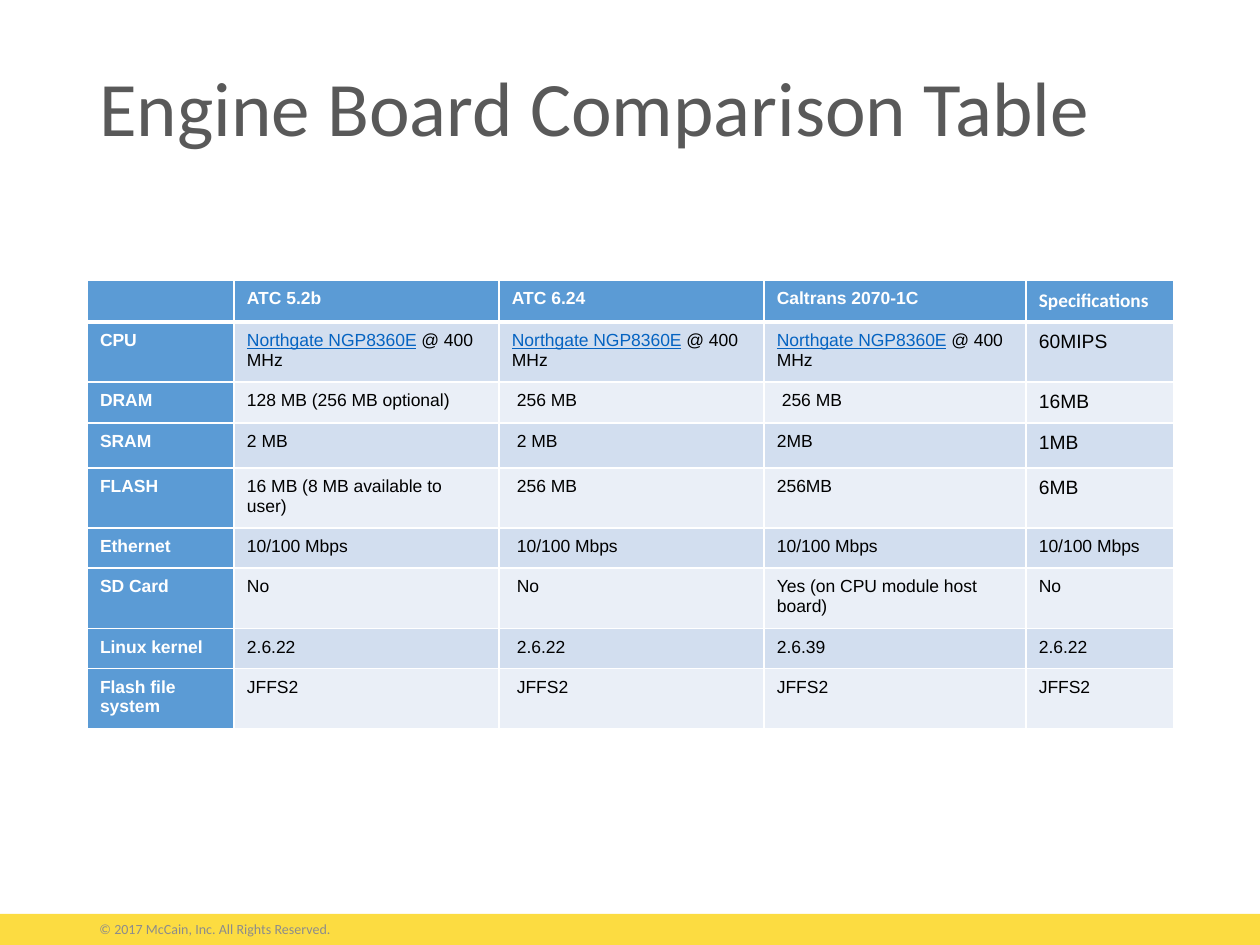
import pptx
import pptx.util
import pptx.dml.color
import pptx.enum.shapes
import pptx.enum.text
import pptx.oxml.ns
from lxml import etree

RGBColor = pptx.dml.color.RGBColor
WHITE = RGBColor(0xFF, 0xFF, 0xFF)
BLACK = RGBColor(0x00, 0x00, 0x00)
GOLD = RGBColor(0xFC, 0xDC, 0x41)
DARK = RGBColor(0x59, 0x59, 0x59)
GREY = RGBColor(0x8C, 0x8C, 0x8C)
BLUE = RGBColor(0x5B, 0x9B, 0xD5)
LINK = RGBColor(0x05, 0x63, 0xC1)
BANDS = [RGBColor(0xEA, 0xEF, 0xF7), RGBColor(0xD2, 0xDE, 0xEF)]

PX = 914400 // 126
Pt = pptx.util.Pt
qn = pptx.oxml.ns.qn
ANCHOR = pptx.enum.text.MSO_ANCHOR

CHIP = "Northgate NGP8360E"
SPEED = " @ 400 MHz"
ROWS = [
    ["", "ATC 5.2b", "ATC 6.24", "Caltrans 2070-1C", "Specifications"],
    ["CPU", CHIP + SPEED, CHIP + SPEED, CHIP + SPEED, "60MIPS"],
    ["DRAM", "128 MB (256 MB optional)", "256 MB", "256 MB", "16MB"],
    ["SRAM", "2 MB", "2 MB", "2MB", "1MB"],
    ["FLASH", "16 MB (8 MB available to user)", "256 MB", "256MB", "6MB"],
    ["Ethernet"] + ["10/100 Mbps"] * 4,
    ["SD Card", "No", "No", "Yes (on CPU module host board)", "No"],
    ["Linux kernel", "2.6.22", "2.6.22", "2.6.39", "2.6.22"],
    ["Flash file system"] + ["JFFS2"] * 4,
]
WIDTHS = [147, 265, 265, 262, 148]
HEIGHTS = [42, 57, 41, 45, 55, 40, 58, 40, 57]


def label(left, top, width, height, text, size, color, anchor):
    box = slide.shapes.add_textbox(left * PX, top * PX, width * PX, height * PX)
    frame = box.text_frame
    frame.word_wrap = True
    frame.vertical_anchor = anchor
    para = frame.paragraphs[0]
    para.text = text
    para.font.name = "Calibri"
    para.font.size = Pt(size)
    para.font.color.rgb = color
    return para


def border(cell, side, width):
    line = etree.SubElement(cell._tc.get_or_add_tcPr(), qn("a:ln" + side), w=str(Pt(width)))
    fill = etree.SubElement(line, qn("a:solidFill"))
    etree.SubElement(fill, qn("a:srgbClr"), val=str(WHITE))


deck = pptx.Presentation()
deck.slide_width = 1260 * PX
deck.slide_height = 945 * PX
slide = deck.slides.add_slide(deck.slide_layouts[6])

bar = slide.shapes.add_shape(
    pptx.enum.shapes.MSO_SHAPE.RECTANGLE, 0, 914 * PX, 1260 * PX, 31 * PX)
bar.shadow.inherit = False
bar.fill.solid()
bar.fill.fore_color.rgb = GOLD
bar.line.fill.background()

title = label(87, 64, 1086, 125, "Engine Board Comparison Table", 44, DARK, ANCHOR.TOP)
title.line_spacing = 0.9

table = slide.shapes.add_table(
    len(ROWS), len(WIDTHS), 87 * PX, 280 * PX, sum(WIDTHS) * PX, sum(HEIGHTS) * PX).table
for col, width in zip(table.columns, WIDTHS):
    col.width = width * PX
for row, height in zip(table.rows, HEIGHTS):
    row.height = height * PX

for r, texts in enumerate(ROWS):
    for c, text in enumerate(texts):
        cell = table.cell(r, c)
        head = r == 0 or c == 0
        for side in "LRTB":
            thick = (r, side) in [(0, "B"), (1, "T")]
            border(cell, side, 3 if thick else 1)
        cell.fill.solid()
        cell.fill.fore_color.rgb = BLUE if head else BANDS[r % 2]

        # Most of the ATC 6.24 values sit a little further in
        inset = (c == 2 and r > 1) or (r, c) == (2, 3)
        cell.margin_left = (18 if inset else 13) * PX
        cell.margin_right = 13 * PX
        cell.margin_top = cell.margin_bottom = 9 * PX

        para = cell.text_frame.paragraphs[0]
        size = Pt(11 if c == 4 and r < 5 else 10)
        para.font.name = "Calibri" if (r, c) == (0, 4) else "Arial"
        para.font.size = size
        para.font.bold = head
        para.font.color.rgb = WHITE if head else BLACK
        if text.startswith(CHIP):
            chip = para.add_run()
            chip.text = CHIP
            chip.font.underline = True
            chip.font.color.rgb = LINK
            para.add_run().text = SPEED
        elif text:
            para.add_run().text = text
        else:
            etree.SubElement(para._p, qn("a:endParaRPr"), sz=str(size.centipoints))

label(87, 904, 426, 50, "© 2017 McCain, Inc. All Rights Reserved.", 8, GREY, ANCHOR.MIDDLE)

deck.save("out.pptx")
